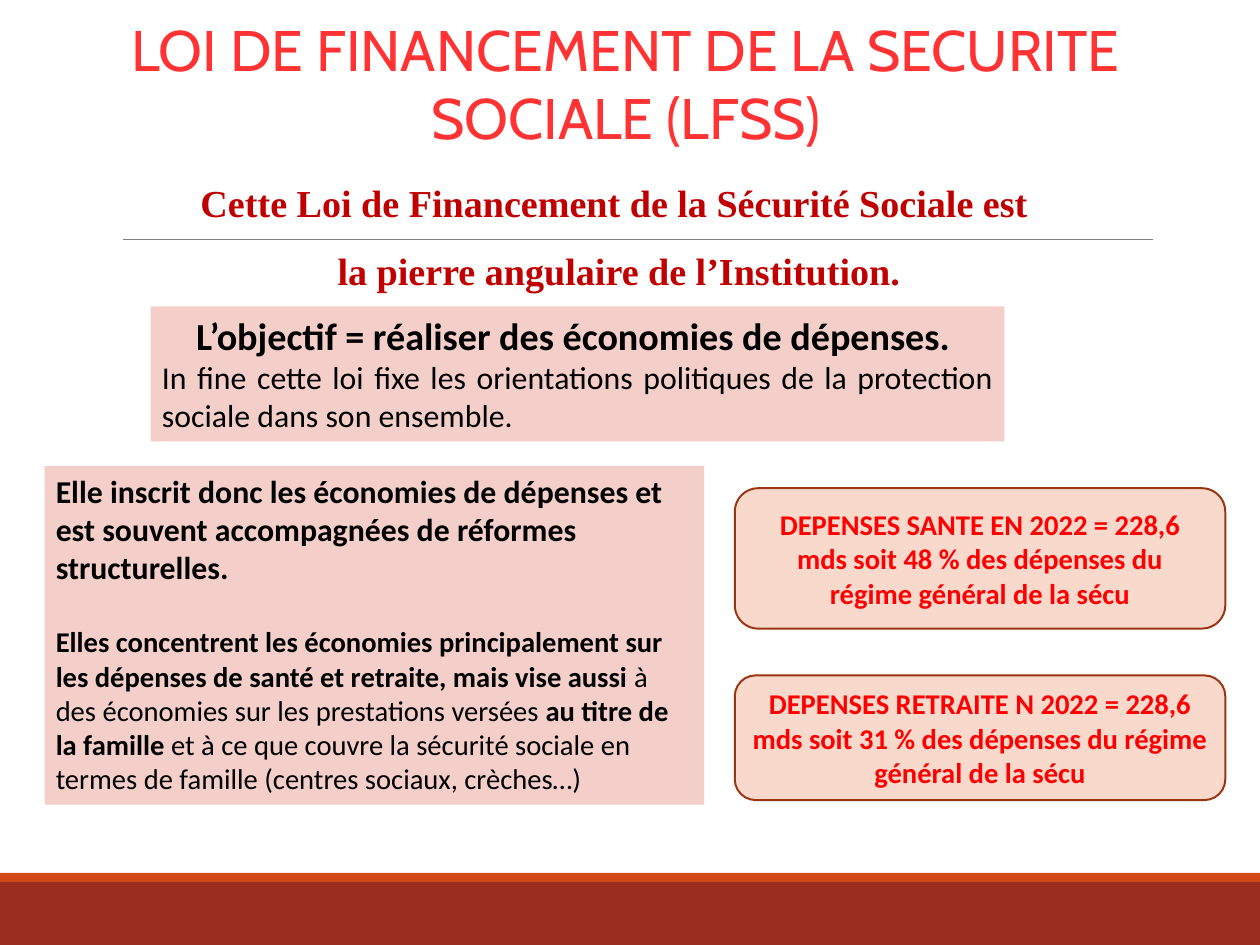
"""Build the slide on the social security financing law."""
from dataclasses import dataclass
from typing import Any

import lxml.etree
import pptx
import pptx.dml.color
import pptx.enum.shapes
import pptx.enum.text
import pptx.oxml.ns
import pptx.util

Cm = pptx.util.Cm
Pt = pptx.util.Pt
Align = pptx.enum.text.PP_ALIGN
Anchor = pptx.enum.text.MSO_ANCHOR
Kind = pptx.enum.shapes.MSO_SHAPE
PINK = "F4CEC9"
PEACH = "FAD9CD"
RUST = "9C3511"


@dataclass
class Box:
    left: float
    top: float
    width: float
    height: float
    fill: str = ""
    line: str = ""
    kind: Any = Kind.RECTANGLE

    def place(self) -> list[pptx.util.Length]:
        return [Cm(n) for n in (self.left, self.top, self.width, self.height)]


@dataclass
class Card:
    box: Box
    text: str


def color(code: str) -> pptx.dml.color.RGBColor:
    return pptx.dml.color.RGBColor.from_string(code)


def draw(slide: Any, box: Box) -> Any:
    shape = slide.shapes.add_shape(box.kind, *box.place())
    shape.shadow.inherit = False
    shape.fill.solid()
    shape.fill.fore_color.rgb = color(box.fill)
    if box.line:
        shape.line.color.rgb = color(box.line)
        shape.line.width = Pt(1.25)
    else:
        shape.line.fill.background()
    return shape


def rule(slide: Any, left: float, right: float, top: float) -> None:
    line = slide.shapes.add_connector(
        pptx.enum.shapes.MSO_CONNECTOR.STRAIGHT, Cm(left), Cm(top), Cm(right), Cm(top))
    line.line.color.rgb = color("808080")
    line.line.width = Pt(0.5)
    props = line._element.spPr
    lxml.etree.SubElement(props, pptx.oxml.ns.qn("a:effectLst"))


def write(shape: Any, *runs: tuple[str, bool], size: float, font: str = "Calibri",
          ink: str = "000000", align: Any = Align.LEFT, anchor: Any = Anchor.TOP,
          space: float = 1.0, before: float = 0) -> None:
    frame = shape.text_frame
    frame.word_wrap = True
    frame.auto_size = pptx.enum.text.MSO_AUTO_SIZE.NONE
    frame.vertical_anchor = anchor
    para = frame.add_paragraph() if frame.text else frame.paragraphs[0]
    para.alignment = align
    para.line_spacing = space
    para.space_before = Pt(before)
    for text, bold in runs:
        run = para.add_run()
        run.text = text
        run.font.name = font
        run.font.size = Pt(size)
        run.font.bold = bold
        run.font.color.rgb = color(ink)


def main() -> None:
    deck = pptx.Presentation()
    deck.slide_width, deck.slide_height = Cm(28), Cm(21)
    slide = deck.slides.add_slide(deck.slide_layouts[5])

    for band in (Box(0, 19.6, 28, 1.4, "9B2D1F"), Box(0, 19.4, 28, 0.2, "D34817")):
        draw(slide, band)
    rule(slide, 2.74, 25.63, 5.31)

    title = slide.shapes.title
    title.left, title.top, title.width, title.height = Box(2.03, 0.61, 23.75, 2.46).place()
    frame = title.text_frame
    frame.margin_left = frame.margin_right = frame.margin_top = frame.margin_bottom = 0
    write(title, ("LOI DE FINANCEMENT DE LA SECURITE SOCIALE (LFSS)", False),
          size=36, font="Cabin", ink="FF3333", align=Align.CENTER, anchor=Anchor.MIDDLE)

    goal = draw(slide, Box(3.35, 6.81, 18.97, 3, PINK))
    write(goal, ("L’objectif = réaliser des économies de dépenses. ", True),
          size=24, align=Align.CENTER)
    write(goal, ("In fine cette loi fixe les orientations politiques de la protection "
                 "sociale dans son ensemble.", False), size=20, align=Align.JUSTIFY)

    lead = slide.shapes.add_textbox(*Box(1.73, 3.35, 24.05, 3.18).place())
    for text in ("Cette Loi de Financement de la Sécurité Sociale est ",
                 "la pierre angulaire de l’Institution."):
        write(lead, (text, True), size=24, font="Times New Roman", ink="C00000",
              align=Align.CENTER, space=1.5)

    scope = draw(slide, Box(0.99, 10.36, 14.66, 7.52, PINK))
    write(scope, ("Elle inscrit donc les économies de dépenses et est souvent "
                  "accompagnées de réformes structurelles.", True), size=20)
    write(scope,
          ("Elles concentrent les économies principalement sur les dépenses de santé "
           "et retraite, mais vise aussi ", True),
          ("à des économies sur les prestations versées ", False),
          ("au titre de la famille ", True),
          ("et à ce que couvre la sécurité sociale en termes de famille "
           "(centres sociaux, crèches…)", False), size=18, before=24)

    cards = (
        Card(Box(16.33, 10.85, 10.9, 3.12, PEACH, RUST, Kind.ROUNDED_RECTANGLE),
             "DEPENSES SANTE EN 2022 = 228,6 mds soit 48 % des dépenses du "
             "régime général de la sécu"),
        Card(Box(16.33, 15.01, 10.9, 2.77, PEACH, RUST, Kind.ROUNDED_RECTANGLE),
             "DEPENSES RETRAITE N 2022 = 228,6 mds soit 31 % des dépenses du "
             "régime général de la sécu"),
    )
    for card in cards:
        write(draw(slide, card.box), (card.text, True), size=18, ink="FF0000",
              align=Align.CENTER, anchor=Anchor.MIDDLE)

    deck.save("out.pptx")


if __name__ == "__main__":
    main()
